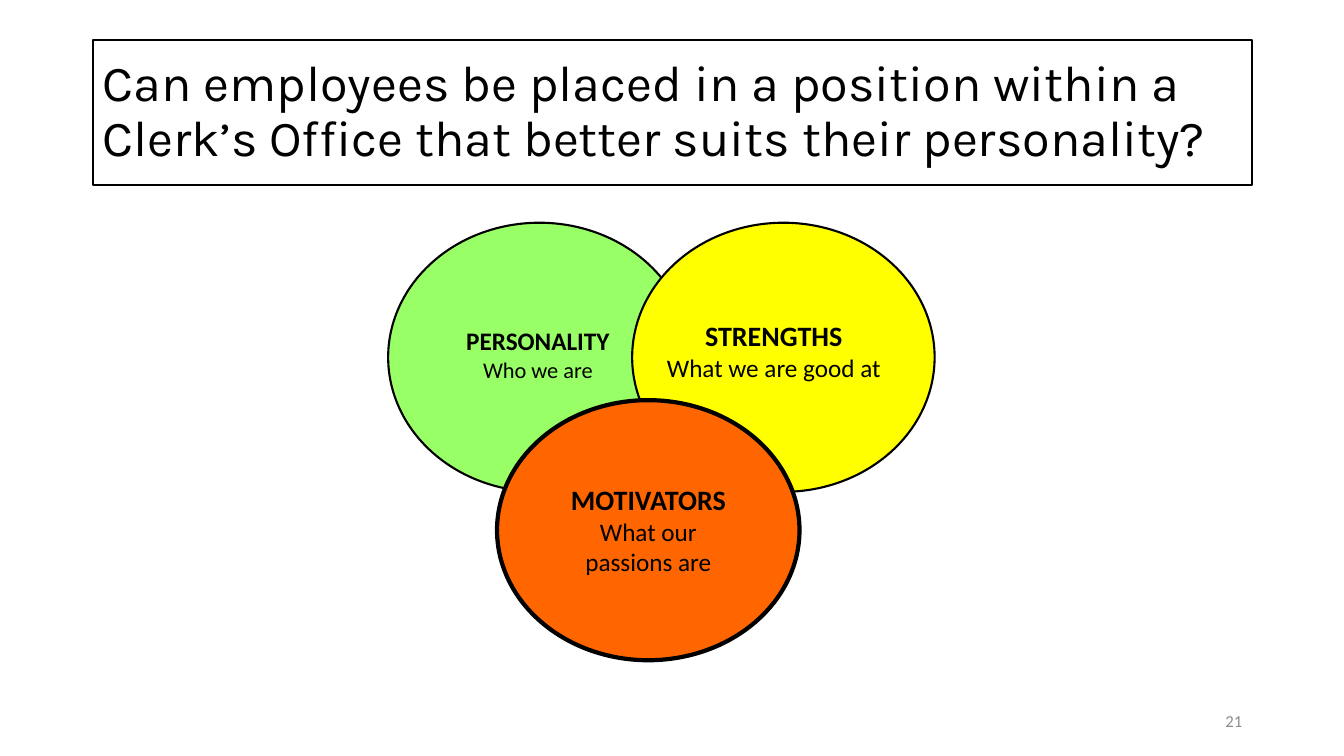
import dataclasses

import pptx
import pptx.dml.color
import pptx.enum.shapes
import pptx.enum.text
import pptx.util

PX = 9144
ALIGN = pptx.enum.text.PP_ALIGN
ANCHOR = pptx.enum.text.MSO_ANCHOR


@dataclasses.dataclass(frozen=True)
class Theme:
    title_font: str = "Karla"
    body_font: str = "Calibri"
    ink: str = "000000"
    paper: str = "FFFFFF"
    muted: str = "8C8C8C"
    personality: str = "99FF66"
    strengths: str = "FFFF00"
    motivators: str = "FF6600"
    title_size: int = 36
    large_size: int = 20
    medium_size: int = 18
    small_size: int = 16
    number_size: int = 12
    thin_line: float = 1.5
    thick_line: float = 3


THEME = Theme()


def color(value):
    return pptx.dml.color.RGBColor.from_string(value)


def box(left, top, width, height):
    return [pptx.util.Emu(length * PX) for length in (left, top, width, height)]


def write(paragraph, text, *, size, font=THEME.body_font, ink=THEME.ink,
          bold=False, align=ALIGN.CENTER, spacing=1.0):
    paragraph.alignment = align
    paragraph.line_spacing = spacing
    run = paragraph.add_run()
    run.text = text
    run.font.name = font
    run.font.size = pptx.util.Pt(size)
    run.font.bold = bold
    run.font.color.rgb = color(ink)


def paint(shape, fill, line_width):
    shape.fill.solid()
    shape.fill.fore_color.rgb = color(fill)
    shape.line.color.rgb = color(THEME.ink)
    shape.line.width = pptx.util.Pt(line_width)


def set_title(slide, text, bounds):
    title = slide.shapes.title
    title.left, title.top, title.width, title.height = box(*bounds)
    paint(title, THEME.paper, THEME.thin_line)
    frame = title.text_frame
    frame.word_wrap = True
    frame.auto_size = pptx.enum.text.MSO_AUTO_SIZE.NONE
    frame.vertical_anchor = ANCHOR.MIDDLE
    write(frame.paragraphs[0], text, size=THEME.title_size,
          font=THEME.title_font, align=ALIGN.LEFT, spacing=0.9)


def add_circle(slide, bounds, fill, line_width):
    oval = pptx.enum.shapes.MSO_SHAPE.OVAL
    circle = slide.shapes.add_shape(oval, *box(*bounds))
    circle.shadow.inherit = False
    paint(circle, fill, line_width)


def add_text_frame(slide, bounds, anchor=ANCHOR.TOP):
    frame = slide.shapes.add_textbox(*box(*bounds)).text_frame
    frame.word_wrap = True
    frame.vertical_anchor = anchor
    return frame


def add_label(slide, bounds, heading, detail, heading_size, detail_size):
    frame = add_text_frame(slide, bounds)
    write(frame.paragraphs[0], heading, size=heading_size, bold=True)
    write(frame.add_paragraph(), detail, size=detail_size)


def add_slide_number(slide, text, bounds):
    frame = add_text_frame(slide, bounds, ANCHOR.MIDDLE)
    write(frame.paragraphs[0], text, size=THEME.number_size,
          ink=THEME.muted, align=ALIGN.RIGHT)


def main():
    presentation = pptx.Presentation()
    presentation.slide_width = pptx.util.Emu(1333 * PX)
    presentation.slide_height = pptx.util.Emu(750 * PX)
    slide = presentation.slides.add_slide(presentation.slide_layouts[5])

    set_title(slide, "Can employees be placed in a position within a Clerk’s "
              "Office that better suits their personality?", (92, 40, 1150, 144))

    circles = [
        ((385, 221, 300, 267), THEME.personality, THEME.thin_line),
        ((627, 221, 300, 267), THEME.strengths, THEME.thin_line),
        ((493, 397, 300, 258), THEME.motivators, THEME.thick_line),
    ]
    for circle in circles:
        add_circle(slide, *circle)

    labels = [
        ((440, 318, 187, 67), "PERSONALITY", "Who we are",
         THEME.medium_size, THEME.small_size),
        ((643, 311, 249, 74), "STRENGTHS", "What we are good at",
         THEME.large_size, THEME.medium_size),
        ((544, 474, 198, 104), "MOTIVATORS", "What our passions are",
         THEME.large_size, THEME.medium_size),
    ]
    for label in labels:
        add_label(slide, *label)

    add_slide_number(slide, "21", (942, 695, 300, 40))
    presentation.save("out.pptx")


if __name__ == "__main__":
    main()
